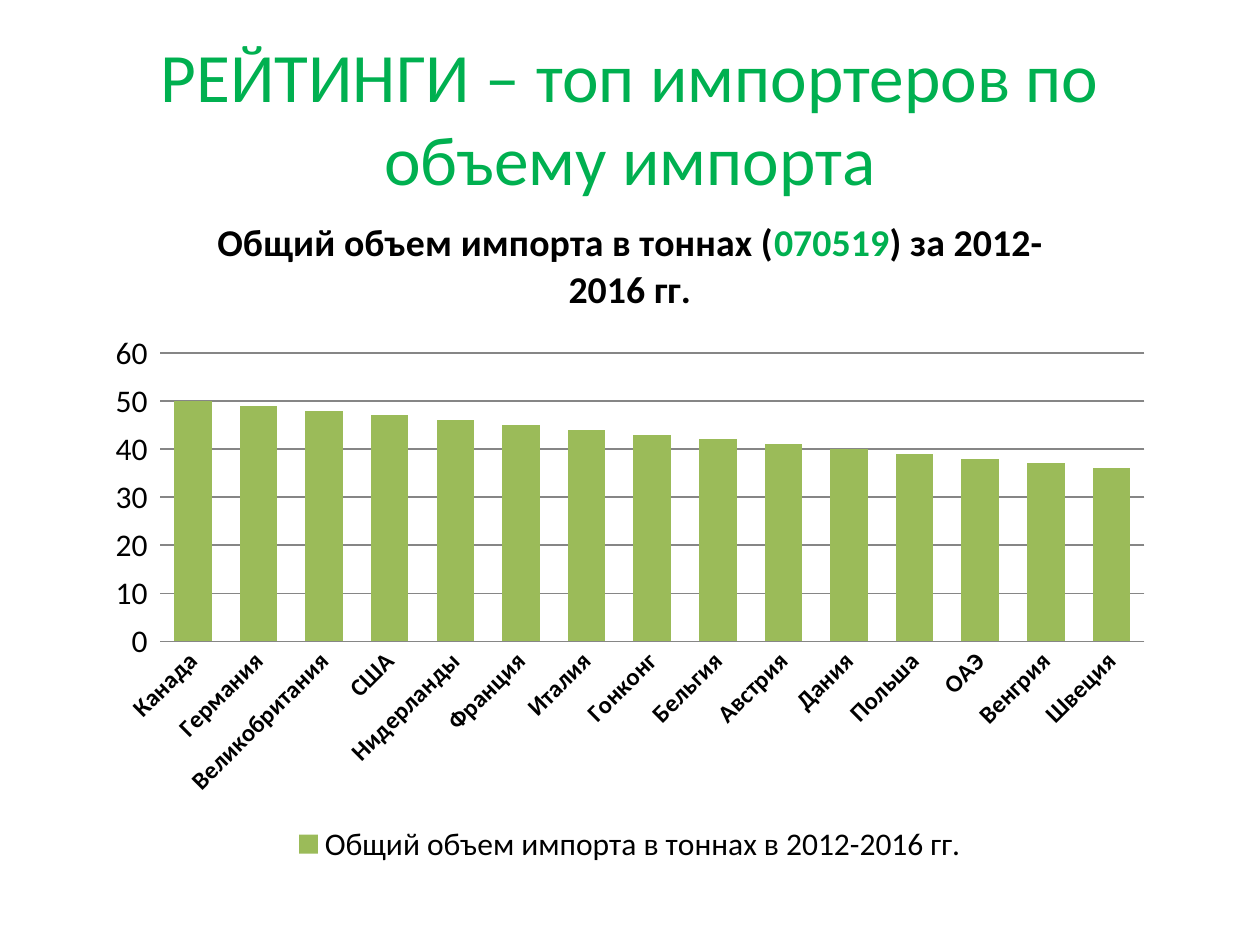
from pptx import Presentation
from pptx.chart.data import CategoryChartData
from pptx.dml.color import RGBColor
from pptx.enum.chart import XL_CHART_TYPE, XL_LEGEND_POSITION, XL_TICK_MARK
from pptx.enum.text import MSO_ANCHOR, PP_ALIGN
from pptx.util import Cm, Pt

COLUMN = XL_CHART_TYPE.COLUMN_CLUSTERED
BOTTOM = XL_LEGEND_POSITION.BOTTOM
TICK_NONE, TICK_OUT = XL_TICK_MARK.NONE, XL_TICK_MARK.OUTSIDE
MIDDLE, CENTER = MSO_ANCHOR.MIDDLE, PP_ALIGN.CENTER

GREEN = RGBColor(0x00, 0xB0, 0x50)
BAR_GREEN = RGBColor(0x9B, 0xBB, 0x59)
BLACK = RGBColor(0x00, 0x00, 0x00)
GRAY = RGBColor(0x86, 0x86, 0x86)
FONT = "Calibri"

COUNTRIES = ["Канада", "Германия", "Великобритания", "США", "Нидерланды",
             "Франция", "Италия", "Гонконг", "Бельгия", "Австрия", "Дания",
             "Польша", "ОАЭ", "Венгрия", "Швеция"]
VOLUMES = [50, 49, 48, 47, 46, 45, 44, 43, 42, 41, 40, 39, 38, 37, 36]
SERIES_NAME = "Общий объем импорта в тоннах в 2012-2016 гг."
CHART_TITLE = [("Общий объем импорта в тоннах (", BLACK), ("070519", GREEN),
               (") за 2012-2016 гг.", BLACK)]


def set_font(font, size, color, bold=False):
    font.name, font.size, font.bold = FONT, Pt(size), bold
    font.color.rgb = color


def add_title(s, left, top, width, height):
    sp = s.shapes.title
    sp.left, sp.top, sp.width, sp.height = left, top, width, height
    tf = sp.text_frame
    tf.word_wrap = True
    tf.vertical_anchor = MIDDLE
    p = tf.paragraphs[0]
    p.alignment = CENTER
    r = p.add_run()
    r.text = "РЕЙТИНГИ – топ импортеров по объему импорта"
    set_font(r.font, 39.6, GREEN)


def format_axes(chart):
    cat, val = chart.category_axis, chart.value_axis
    cat.major_tick_mark = TICK_NONE
    cat.format.line.color.rgb = GRAY
    set_font(cat.tick_labels.font, 14, BLACK, bold=True)
    cat.tick_labels.font  # the text properties exist from here on
    body = cat._element.txPr.bodyPr
    body.set("rot", "-2700000")
    body.set("vert", "horz")

    val.minimum_scale, val.maximum_scale, val.major_unit = 0, 60, 10
    val.major_tick_mark = TICK_OUT
    val.format.line.fill.background()
    val.has_major_gridlines = True
    val.major_gridlines.format.line.color.rgb = GRAY
    val.tick_labels.number_format = "0"
    val.tick_labels.number_format_is_linked = False
    set_font(val.tick_labels.font, 18, BLACK)


def add_import_chart(s, left, top, width, height):
    data = CategoryChartData()
    data.categories = COUNTRIES
    data.add_series(SERIES_NAME, VOLUMES)
    chart = s.shapes.add_chart(COLUMN, left, top, width, height, data).chart
    set_font(chart.font, 18, BLACK)

    chart.has_title = True
    p = chart.chart_title.text_frame.paragraphs[0]
    for text, color in CHART_TITLE:
        r = p.add_run()
        r.text = text
        set_font(r.font, 21.6, color, bold=True)
    chart.chart_title.include_in_layout = False

    plot = chart.plots[0]
    plot.gap_width = 75
    plot.vary_by_categories = False
    fill = plot.series[0].format.fill
    fill.solid()
    fill.fore_color.rgb = BAR_GREEN
    format_axes(chart)

    chart.has_legend = True
    chart.legend.position = BOTTOM
    chart.legend.include_in_layout = False
    set_font(chart.legend.font, 18, BLACK)


def main():
    prs = Presentation()
    prs.slide_width, prs.slide_height = Cm(25.4), Cm(19.05)
    s = prs.slides.add_slide(prs.slide_layouts[5])
    add_title(s, Cm(1.27), Cm(0.76), Cm(22.86), Cm(3.18))
    add_import_chart(s, Cm(1.9), Cm(3.89), Cm(21.6), Cm(13.64))
    prs.save("out.pptx")


if __name__ == "__main__":
    main()
